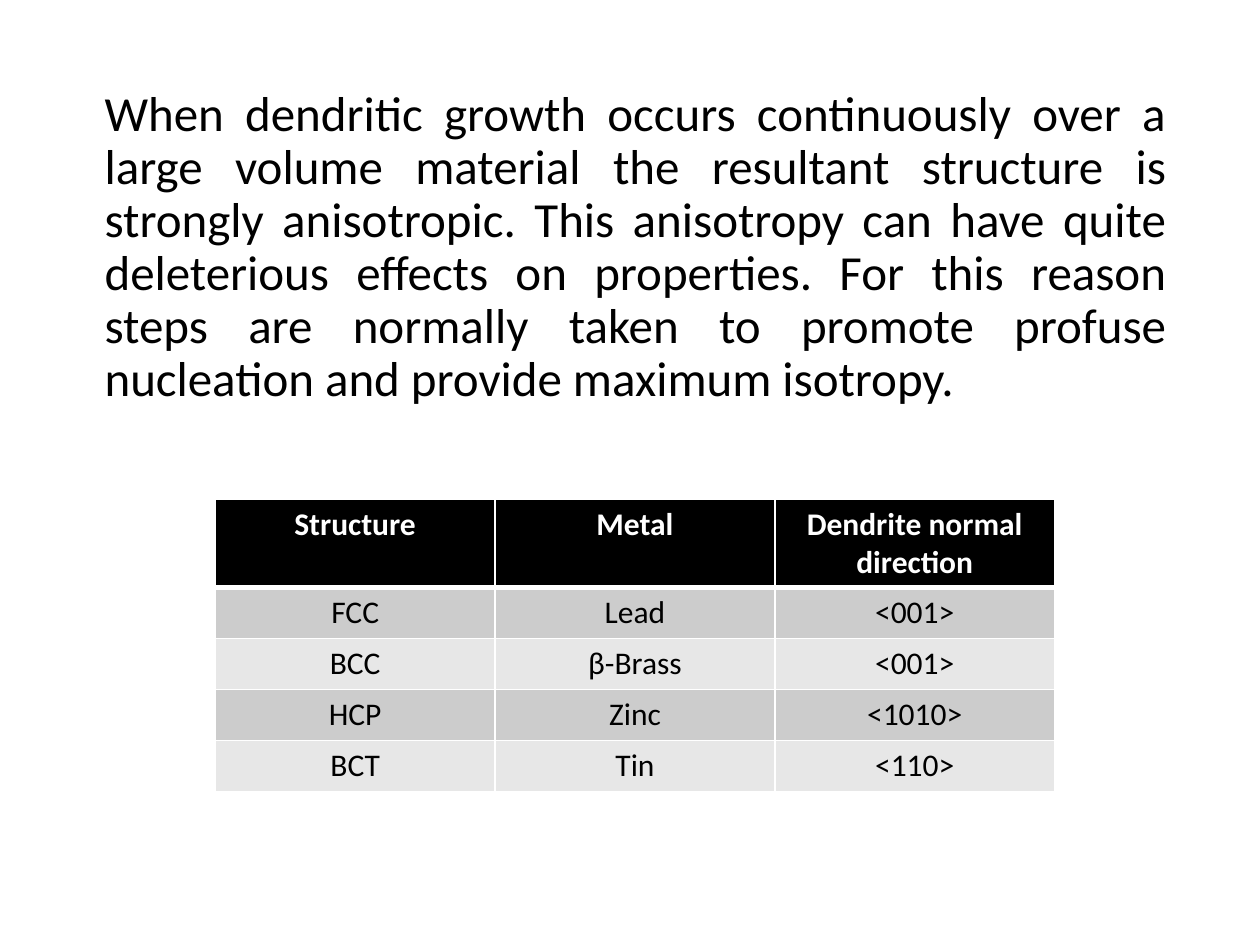
import pptx
import pptx.dml.color
import pptx.enum.text
import pptx.oxml.ns
import pptx.util
from lxml import etree

Cm, Pt = pptx.util.Cm, pptx.util.Pt
Align = pptx.enum.text.PP_ALIGN

COLORS = {"black": "000000", "white": "FFFFFF", "dark": "CCCCCC", "light": "E7E7E7"}

BODY = (
    "When dendritic growth occurs continuously over a large volume material "
    "the resultant structure is strongly anisotropic. This anisotropy can have "
    "quite deleterious effects on properties. For this reason steps are normally "
    "taken to promote profuse nucleation and provide maximum isotropy."
)
ROWS = [
    ("Structure", "Metal", "Dendrite normal direction"),
    ("FCC", "Lead", "<001>"),
    ("BCC", "β-Brass", "<001>"),
    ("HCP", "Zinc", "<1010>"),
    ("BCT", "Tin", "<110>"),
]
COL_W, HEAD_H, ROW_H = 5.64, 1.78, 1.03


def color(name):
    return pptx.dml.color.RGBColor.from_string(COLORS[name])


def write(frame, text, size=18, ink="black", bold=False, align=Align.CENTER, space=1.0):
    frame.word_wrap = True
    para = frame.paragraphs[0]
    para.alignment = align
    para.line_spacing = space
    run = para.add_run()
    run.text = text
    font = run.font
    font.name, font.size, font.bold = "Calibri", Pt(size), bold
    font.color.rgb = color(ink)


def border(cell, **widths):
    """Draw white cell edges; widths in points, keyed L, R, T, B in that order."""
    props = cell._tc.get_or_add_tcPr()
    qn = pptx.oxml.ns.qn
    for side, width in widths.items():
        line = etree.SubElement(props, qn(f"a:ln{side}"), w=str(Pt(width)))
        fill = etree.SubElement(line, qn("a:solidFill"))
        etree.SubElement(fill, qn("a:srgbClr"), val=COLORS["white"])


def add_grid(slide):
    height = HEAD_H + ROW_H * (len(ROWS) - 1)
    cols = len(ROWS[0])
    table = slide.shapes.add_table(
        len(ROWS), cols, Cm(4.34), Cm(10.06), Cm(COL_W * cols), Cm(height)
    ).table
    for col in table.columns:
        col.width = Cm(COL_W)
    for r, row in enumerate(ROWS):
        head = r == 0
        table.rows[r].height = Cm(HEAD_H if head else ROW_H)
        shade = "black" if head else ("light", "dark")[r % 2]
        for c, text in enumerate(row):
            cell = table.cell(r, c)
            border(cell, L=1, R=1, T=3 if r == 1 else 1, B=3 if head else 1)
            cell.fill.solid()
            cell.fill.fore_color.rgb = color(shade)
            write(cell.text_frame, text, ink="white" if head else "black", bold=head)


def main():
    deck = pptx.Presentation()
    deck.slide_width, deck.slide_height = Cm(25.4), Cm(19.05)
    slide = deck.slides.add_slide(deck.slide_layouts[6])
    box = slide.shapes.add_textbox(Cm(1.86), Cm(1.68), Cm(21.9), Cm(12.09))
    write(box.text_frame, BODY, size=28, align=Align.JUSTIFY, space=0.9)
    add_grid(slide)
    deck.save("out.pptx")


if __name__ == "__main__":
    main()
